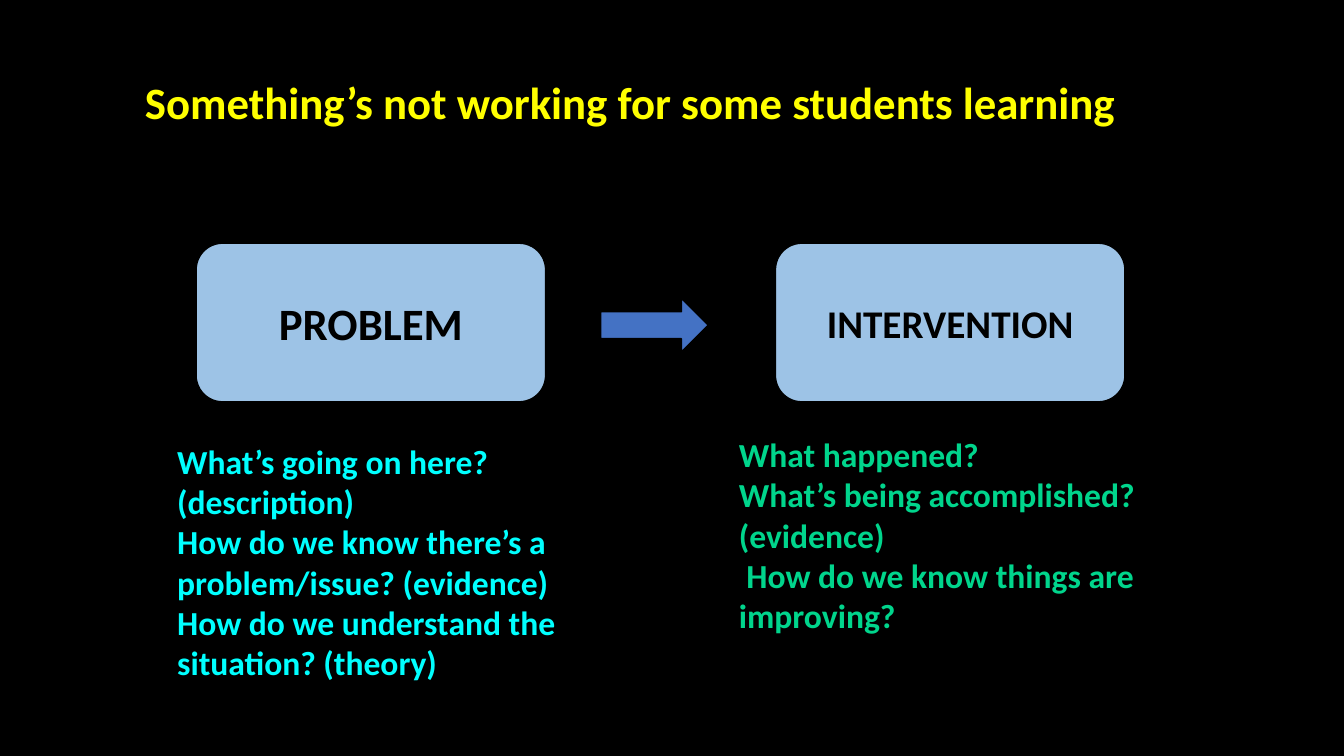
from pptx import Presentation
from pptx.dml.color import RGBColor
from pptx.enum.shapes import MSO_SHAPE
from pptx.enum.text import MSO_ANCHOR, PP_ALIGN
from pptx.util import Inches, Pt

ROUNDED = MSO_SHAPE.ROUNDED_RECTANGLE
ARROW = MSO_SHAPE.RIGHT_ARROW
MIDDLE = MSO_ANCHOR.MIDDLE
CENTER = PP_ALIGN.CENTER

BLACK = RGBColor(0x00, 0x00, 0x00)
LIGHT_BLUE = RGBColor(0x9D, 0xC3, 0xE6)
ARROW_BLUE = RGBColor(0x44, 0x72, 0xC4)
YELLOW = RGBColor(0xFF, 0xFF, 0x00)
CYAN = RGBColor(0x00, 0xFF, 0xFF)
GREEN = RGBColor(0x00, 0xD5, 0x8C)

SLIDE_WIDTH = 10
SLIDE_HEIGHT = SLIDE_WIDTH * 9 / 16

presentation = Presentation()
presentation.slide_width = Inches(SLIDE_WIDTH)
presentation.slide_height = Inches(SLIDE_HEIGHT)
slide = presentation.slides.add_slide(presentation.slide_layouts[6])
slide.background.fill.solid()
slide.background.fill.fore_color.rgb = BLACK

BOX_TOP, BOX_WIDTH, BOX_HEIGHT = 1.81, 2.6, 1.18
PROBLEM_LEFT, INTERVENTION_LEFT = 1.46, 5.77
ARROW_LEFT, ARROW_WIDTH, ARROW_HEIGHT = 4.47, 0.8, 0.4
ARROW_TOP = BOX_TOP + (BOX_HEIGHT - ARROW_HEIGHT) / 2 + 0.02


def add_block(kind, left, top, width, height, color):
    shape = slide.shapes.add_shape(
        kind, Inches(left), Inches(top), Inches(width), Inches(height)
    )
    shape.shadow.inherit = False
    shape.fill.solid()
    shape.fill.fore_color.rgb = color
    shape.line.color.rgb = BLACK
    shape.line.width = Pt(0.75)
    return shape


def add_lines(text_frame, lines, size, color, alignment=None):
    for index, line in enumerate(lines):
        paragraph = text_frame.paragraphs[0] if index == 0 else text_frame.add_paragraph()
        paragraph.alignment = alignment
        run = paragraph.add_run()
        run.text = line
        run.font.name = "Calibri"
        run.font.size = Pt(size)
        run.font.bold = True
        run.font.color.rgb = color


for label, left, size in [
    ("PROBLEM", PROBLEM_LEFT, 24),
    ("INTERVENTION", INTERVENTION_LEFT, 21),
]:
    stage = add_block(ROUNDED, left, BOX_TOP, BOX_WIDTH, BOX_HEIGHT, LIGHT_BLUE)
    stage.text_frame.word_wrap = False
    stage.text_frame.vertical_anchor = MIDDLE
    add_lines(stage.text_frame, [label], size, BLACK, CENTER)

add_block(ARROW, ARROW_LEFT, ARROW_TOP, ARROW_WIDTH, ARROW_HEIGHT, ARROW_BLUE)

title = ["Something’s not working for some students learning"]
problem_questions = [
    "What’s going on here? (description)",
    "How do we know there’s a problem/issue? (evidence)",
    "How do we understand the situation? (theory)",
]
intervention_questions = [
    "What happened?",
    "What’s being accomplished? (evidence)",
    " How do we know things are improving?",
]

for lines, left, top, width, height, size, color in [
    (title, 0.98, 0.51, 8.04, 0.96, 24, YELLOW),
    (problem_questions, 1.22, 3.23, 3.07, 2.17, 18, CYAN),
    (intervention_questions, 5.4, 3.18, 3.54, 1.92, 18, GREEN),
]:
    text_box = slide.shapes.add_textbox(
        Inches(left), Inches(top), Inches(width), Inches(height)
    )
    text_box.text_frame.word_wrap = True
    add_lines(text_box.text_frame, lines, size, color)

presentation.save("out.pptx")
